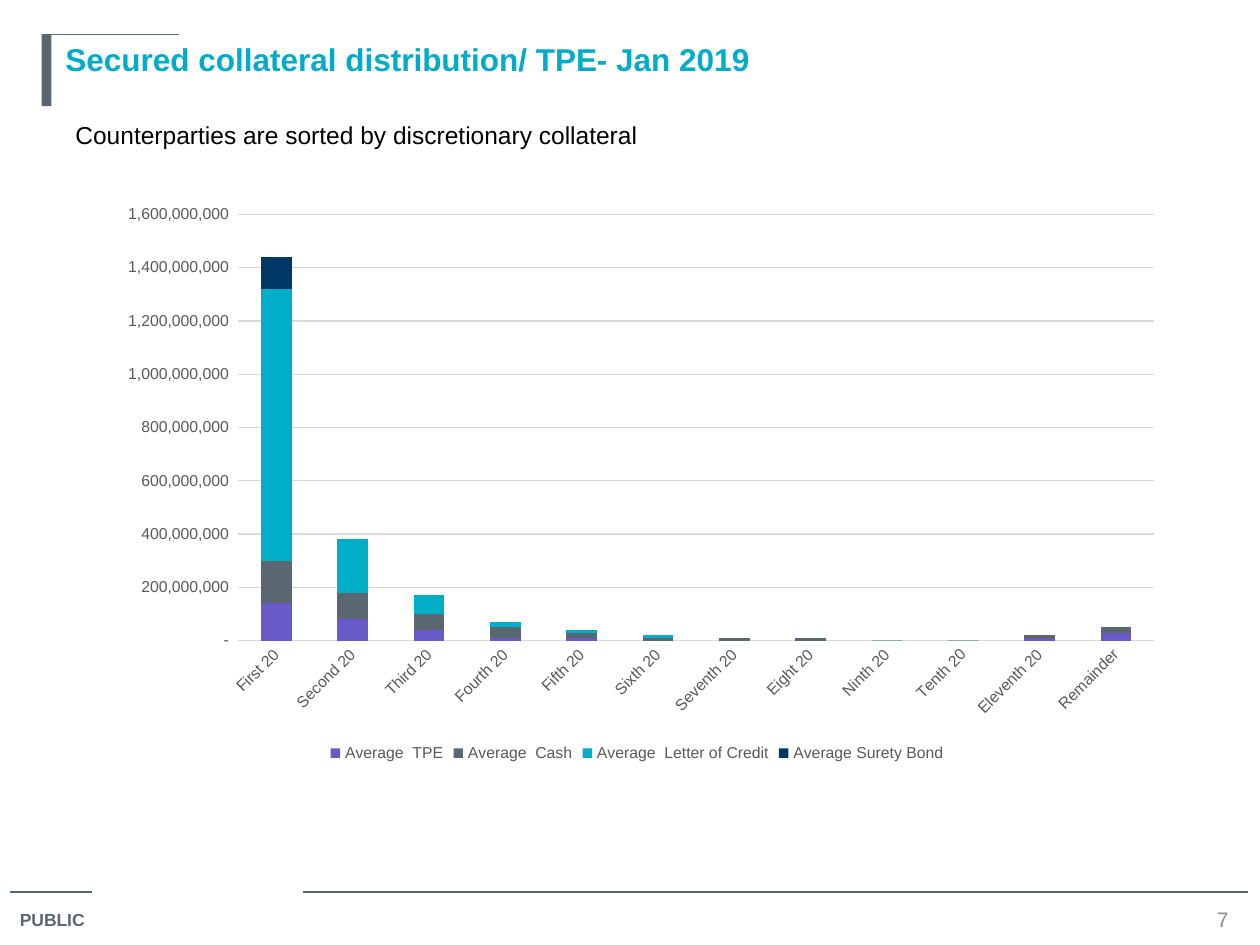
from dataclasses import dataclass

from lxml.etree import SubElement
from pptx import Presentation
from pptx.chart.data import CategoryChartData
from pptx.dml.color import RGBColor
from pptx.enum.chart import XL_CHART_TYPE as ChartType
from pptx.enum.chart import XL_LEGEND_POSITION as LegendPos
from pptx.enum.chart import XL_TICK_MARK as TickMark
from pptx.enum.shapes import MSO_CONNECTOR as Connector
from pptx.enum.shapes import MSO_SHAPE as Shape
from pptx.enum.text import MSO_ANCHOR as Anchor
from pptx.enum.text import PP_ALIGN as Align
from pptx.oxml import parse_xml
from pptx.oxml.ns import nsdecls, qn
from pptx.util import Cm, Pt


@dataclass(frozen=True)
class Theme:
    font: str = "Arial"
    slate: str = "5B6770"
    title: str = "00ACC8"
    body: str = "000000"
    page: str = "8C8C8C"
    axis: str = "595959"
    grid: str = "D9D9D9"
    title_size: float = 18
    body_size: float = 14
    page_size: float = 12
    label_size: float = 10
    axis_size: float = 9
    rule: float = 0.75


@dataclass(frozen=True)
class Rule:
    """Horizontal line, in centimetres."""
    left: float
    right: float
    y: float


@dataclass(frozen=True)
class Label:
    """Single-line text box, in centimetres."""
    text: str
    box: tuple[float, float, float, float]
    size: float
    color: str
    bold: bool = False
    centred: bool = False


@dataclass(frozen=True)
class Series:
    """Stacked series, values in millions."""
    name: str
    color: str
    millions: tuple[int, ...]


T = Theme()

RULES = [Rule(0.2, 1.85, 17.98), Rule(6.1, 25.15, 17.98), Rule(0.84, 3.61, 0.69)]

LABELS = [
    Label("PUBLIC", (0.15, 18.21, 1.96, 0.71), T.label_size, T.slate, bold=True),
    Label("Secured collateral distribution/ TPE- Jan 2019", (1.07, 0.69, 23.5, 3.18),
          T.title_size, T.title, bold=True),
    Label("7", (24.33, 18.24, 0.64, 0.58), T.page_size, T.page, centred=True),
    Label("Counterparties are sorted by discretionary collateral", (1.27, 2.29, 21.59, 0.86),
          T.body_size, T.body),
]

GROUPS = [f"{n} 20" for n in ("First", "Second", "Third", "Fourth", "Fifth", "Sixth", "Seventh",
                              "Eight", "Ninth", "Tenth", "Eleventh")] + ["Remainder"]

SERIES = [
    Series("Average  TPE", "685BC7", (140, 80, 40, 10, 10, 0, 0, 0, 0, 0, 10, 30)),
    Series("Average  Cash", T.slate, (160, 100, 60, 40, 20, 10, 10, 10, 0, 0, 10, 20)),
    Series("Average  Letter of Credit", "00AEC7",
           (1020, 200, 70, 20, 10, 10, 0, 0, 0, 0, 0, 0)),
    Series("Average Surety Bond", "003865", (120,) + (0,) * 11),
]


def rgb(color: str) -> RGBColor:
    return RGBColor.from_string(color)


def set_font(font, size: float, color: str, bold: bool = False) -> None:
    font.name, font.size, font.bold = T.font, Pt(size), bold
    font.color.rgb = rgb(color)


def set_line(line, color: str) -> None:
    line.color.rgb = rgb(color)
    line.width = Pt(T.rule)


def add_rule(s, rule: Rule) -> None:
    line = s.shapes.add_connector(Connector.STRAIGHT, Cm(rule.left), Cm(rule.y),
                                  Cm(rule.right), Cm(rule.y))
    set_line(line.line, T.slate)
    SubElement(line._element.spPr, qn("a:effectLst"))


def add_label(s, label: Label) -> None:
    tf = s.shapes.add_textbox(*map(Cm, label.box)).text_frame
    tf.word_wrap = True
    p = tf.paragraphs[0]
    p.text = label.text
    set_font(p.font, label.size, label.color, label.bold)
    if label.centred:
        tf.margin_left = tf.margin_right = 0
        tf.vertical_anchor = Anchor.MIDDLE
        p.alignment = Align.CENTER


def add_stacked_chart(s, groups: list[str], series: list[Series]) -> None:
    data = CategoryChartData()
    data.categories = groups
    for item in series:
        data.add_series(item.name, [v * 1_000_000 for v in item.millions])
    chart = s.shapes.add_chart(ChartType.COLUMN_STACKED, Cm(1.98), Cm(3.86),
                               Cm(21.72), Cm(11.61), data).chart
    set_font(chart.font, T.label_size, T.body)
    chart.has_title = False

    # Columns
    plot = chart.plots[0]
    plot.gap_width, plot.overlap, plot.vary_by_categories = 150, 100, False
    for column, item in zip(plot.series, series):
        column.format.fill.solid()
        column.format.fill.fore_color.rgb = rgb(item.color)
        column.invert_if_negative = False

    # Axes
    cat, val = chart.category_axis, chart.value_axis
    for axis in (cat, val):
        axis.major_tick_mark = axis.minor_tick_mark = TickMark.NONE
        set_font(axis.tick_labels.font, T.axis_size, T.axis)
    set_line(cat.format.line, T.grid)
    cat._element.txPr.find(qn("a:bodyPr")).set("rot", "-2700000")  # 45 degrees upwards
    val.minimum_scale, val.maximum_scale, val.major_unit = 0, 1.6e9, 2e8
    val.format.line.fill.background()
    set_line(val.major_gridlines.format.line, T.grid)
    val.tick_labels.number_format = '_(* #,##0_);_(* \\(#,##0\\);_(* "-"_);_(@_)'
    val.tick_labels.number_format_is_linked = False

    # Legend
    chart.has_legend = True
    chart.legend.position = LegendPos.BOTTOM
    chart.legend.include_in_layout = False
    set_font(chart.legend.font, T.axis_size, T.axis)

    # Inner plot area as fractions of the chart
    area = chart._chartSpace.chart.plotArea
    for old in area.findall(qn("c:layout")):
        area.remove(old)
    frame = {"x": 0.13, "y": 0.04, "w": 0.85, "h": 0.74}
    modes = "".join(f'<c:{k}Mode val="edge"/>' for k in "xy")
    sizes = "".join(f'<c:{k} val="{v}"/>' for k, v in frame.items())
    area.insert(0, parse_xml(
        f'<c:layout {nsdecls("c")}><c:manualLayout><c:layoutTarget val="inner"/>'
        f'{modes}{sizes}</c:manualLayout></c:layout>'))


def main() -> None:
    prs = Presentation()
    prs.slide_width, prs.slide_height = Cm(25.4), Cm(19.05)
    s = prs.slides.add_slide(prs.slide_layouts[6])

    # Frame: rules and title bar
    for rule in RULES:
        add_rule(s, rule)
    bar = s.shapes.add_shape(Shape.RECTANGLE, Cm(0.84), Cm(0.69), Cm(0.2), Cm(1.45))
    bar.shadow.inherit = False
    bar.fill.solid()
    bar.fill.fore_color.rgb = rgb(T.slate)
    bar.line.fill.background()

    # Text and chart
    for label in LABELS:
        add_label(s, label)
    add_stacked_chart(s, GROUPS, SERIES)
    prs.save("out.pptx")


if __name__ == "__main__":
    main()
